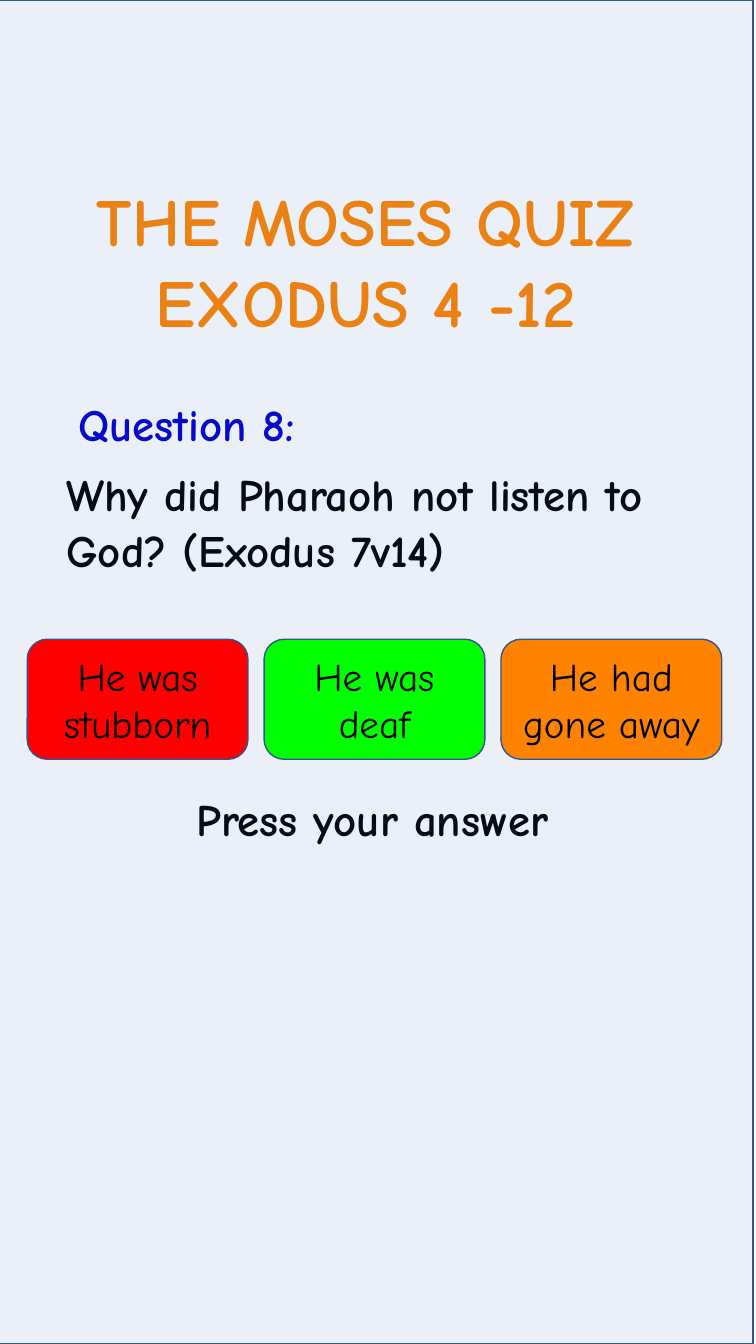
from pptx import Presentation
from pptx import util as u
from pptx.dml.color import RGBColor
from pptx.enum import shapes, text
from pptx.oxml import ns
from lxml import etree

FONT = "Comic Neue"
HUES = {"tint": "4472C4", "edge": "325491", "red": "FF0000", "green": "00FF00",
        "orange": "FF8200", "blue": "0000CC", "black": "000000"}


def hue(name):
    return RGBColor.from_string(HUES[name])


def area(*box):
    return [u.Inches(n) for n in box]


def write(shape, words, size=32, color="black", bold=True, align="LEFT",
          anchor="TOP", wrap=True, line=None, before=0):
    frame = shape.text_frame
    frame.text = words
    frame.word_wrap = wrap
    frame.auto_size = text.MSO_AUTO_SIZE.NONE
    frame.vertical_anchor = text.MSO_ANCHOR[anchor]
    for para in frame.paragraphs:
        para.alignment = text.PP_ALIGN[align]
        para.line_spacing = line
        para.space_before = u.Pt(before)
        for run in para.runs:
            font = run.font
            font.name, font.size, font.bold = FONT, u.Pt(size), bold
            font.color.rgb = hue(color)


def head(slide, words, box, **form):
    title = slide.shapes.title
    title.left, title.top, title.width, title.height = area(*box)
    write(title, words, **form)


def label(slide, words, box, **form):
    write(slide.shapes.add_textbox(*area(*box)), words, **form)


def panel(slide, kind, box, fill):
    shape = slide.shapes.add_shape(shapes.MSO_SHAPE[kind], *area(*box))
    shape.shadow.inherit = False
    shape.fill.solid()
    shape.fill.fore_color.rgb = hue(fill)
    shape.line.color.rgb = hue("edge")
    shape.line.width = u.Pt(1)
    return shape


def fade(shape, share):
    color = shape.fill._xPr.find(".//" + ns.qn("a:srgbClr"))
    etree.SubElement(color, ns.qn("a:alpha"), val=str(share * 1000))


def main():
    deck = Presentation()
    deck.slide_width, deck.slide_height = area(7.5, 13.33)
    slide = deck.slides.add_slide(deck.slide_layouts[5])

    head(slide, "THE MOSES QUIZ \nEXODUS 4 -12 ", (0.3, 1.73, 6.89, 1.72),
         size=48, color="orange", align="CENTER", wrap=False)
    label(slide, "Question 8:", (0.47, 3.89, 2.77, 0.64),
          color="blue", align="CENTER", wrap=False)
    label(slide, "Why did Pharaoh not listen to God? (Exodus 7v14)",
          (0.56, 4.56, 6.36, 1.46), line=u.Pt(40), before=7.5)
    label(slide, "Press your answer", (1.85, 7.86, 4.22, 0.72),
          line=0.9, before=7.5)

    fade(panel(slide, "RECTANGLE", (-0.03, 0, 7.5, 13.33), "tint"), 10)

    answers = [("He was stubborn", "red"), ("He was deaf", "green"),
               ("He had gone away", "orange")]
    for spot, (words, fill) in enumerate(answers):
        button = panel(slide, "ROUNDED_RECTANGLE",
                       (0.27 + 2.35 * spot, 6.34, 2.19, 1.19), fill)
        write(button, words, size=28, bold=False, align="CENTER", anchor="MIDDLE")

    deck.save("out.pptx")


if __name__ == "__main__":
    main()
